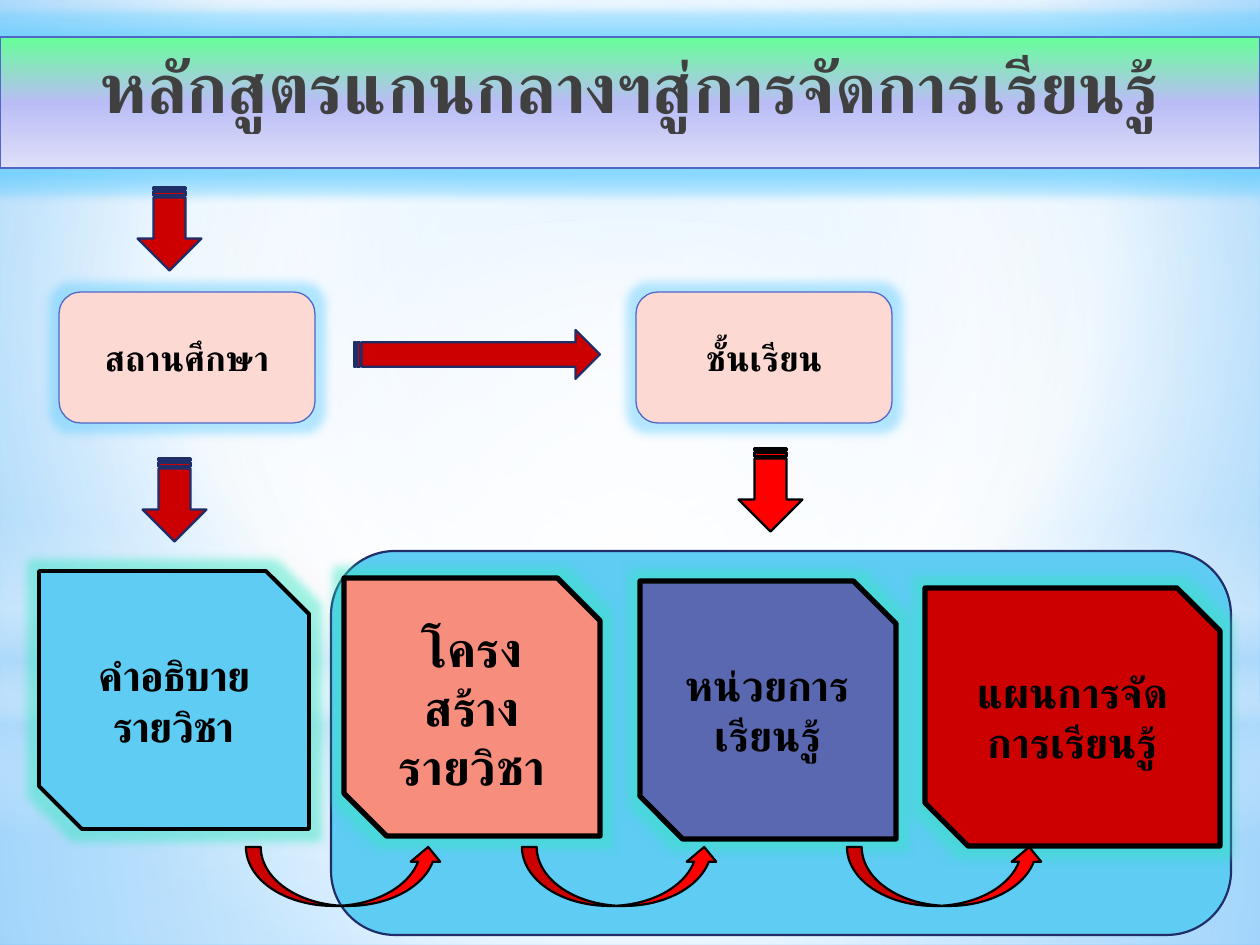
"""Build the slide that leads from the core curriculum to learning plans."""
from dataclasses import dataclass
from typing import Optional

from lxml.etree import SubElement
from pptx import Presentation
from pptx.dml.color import RGBColor
from pptx.enum.shapes import MSO_SHAPE
from pptx.enum.text import MSO_ANCHOR, PP_ALIGN
from pptx.oxml.ns import qn
from pptx.util import Pt

SCALE = 914400 / 126
FONT = "Calibri"

BLACK = RGBColor(0x00, 0x00, 0x00)
WHITE = RGBColor(0xFF, 0xFF, 0xFF)
GREY = RGBColor(0x40, 0x40, 0x40)
NAVY = RGBColor(0x1F, 0x2E, 0x69)
BLUE = RGBColor(0x4E, 0x67, 0xC8)
SKY = RGBColor(0x5E, 0xCC, 0xF3)
HAZE = RGBColor(0xB4, 0xDC, 0xFA)
PINK = RGBColor(0xFC, 0xD9, 0xD3)
CORAL = RGBColor(0xF7, 0x8D, 0x7C)
SLATE = RGBColor(0x59, 0x68, 0xB0)
CRIMSON = RGBColor(0xCC, 0x00, 0x00)
RED = RGBColor(0xFF, 0x00, 0x00)
MINT = RGBColor(0x66, 0xFF, 0x99)
LILAC = RGBColor(0xBA, 0xBD, 0xF5)
PALE = RGBColor(0xDE, 0xDF, 0xF9)
AQUA = RGBColor(0x5E, 0xCC, 0xFF)
TEAL = RGBColor(0x33, 0xE6, 0xC0)
DAY = RGBColor(0x9E, 0xD5, 0xFF)
DEEP = RGBColor(0x5B, 0xB9, 0xFF)


@dataclass
class Stop:
    pos: int
    color: RGBColor
    alpha: int = 100


@dataclass
class Grad:
    stops: list[Stop]
    focus: Optional[tuple[int, int, int, int]] = None


@dataclass
class Box:
    kind: MSO_SHAPE
    left: int
    top: int
    width: int
    height: int
    fill: RGBColor | Grad
    line: Optional[RGBColor] = None
    weight: float = 1.25
    turn: int = 0
    glow: Optional[RGBColor] = None
    text: str = ""
    size: int = 24
    ink: RGBColor = BLACK
    anchor: MSO_ANCHOR = MSO_ANCHOR.MIDDLE
    space: int = 0


def px(value: int) -> int:
    return round(value * SCALE)


def add_color(node, color: RGBColor, alpha: int) -> None:
    tint = SubElement(node, qn("a:srgbClr"), val=str(color))
    if alpha < 100:
        SubElement(tint, qn("a:alpha"), val=str(alpha * 1000))


def blend(fill, node, grad: Grad) -> None:
    fill.gradient()
    root = node.find(".//" + qn("a:gradFill"))
    for child in list(root):
        root.remove(child)
    stops = SubElement(root, qn("a:gsLst"))
    for stop in grad.stops:
        item = SubElement(stops, qn("a:gs"), pos=str(stop.pos * 1000))
        add_color(item, stop.color, stop.alpha)
    if grad.focus:
        ring = SubElement(root, qn("a:path"), path="circle")
        sides = {side: str(part * 1000) for side, part in zip("ltrb", grad.focus)}
        SubElement(ring, qn("a:fillToRect"), **sides)
    else:
        SubElement(root, qn("a:lin"), ang="5400000", scaled="0")


def add_text(shape, box: Box) -> None:
    frame = shape.text_frame
    frame.word_wrap = True
    frame.vertical_anchor = box.anchor
    frame.text = box.text
    for para in frame.paragraphs:
        para.alignment = PP_ALIGN.CENTER
        for run in para.runs:
            font = run.font
            font.name, font.size, font.bold = FONT, Pt(box.size), True
            font.color.rgb = box.ink
            props = run._r.get_or_add_rPr()
            SubElement(props, qn("a:cs"), typeface=FONT)
            if box.space:
                props.set("spc", str(box.space))


def draw(slide, box: Box) -> None:
    place = [px(side) for side in (box.left, box.top, box.width, box.height)]
    shape = slide.shapes.add_shape(box.kind, *place)
    shape.rotation = box.turn
    shape.shadow.inherit = False
    if isinstance(box.fill, Grad):
        blend(shape.fill, shape.element, box.fill)
    else:
        shape.fill.solid()
        shape.fill.fore_color.rgb = box.fill
    if box.line is None:
        shape.line.fill.background()
    else:
        shape.line.color.rgb = box.line
        shape.line.width = Pt(box.weight)
    if box.glow is not None:
        effects = shape.element.spPr.find(qn("a:effectLst"))
        add_color(SubElement(effects, qn("a:glow"), rad=str(Pt(11))), box.glow, 45)
    if box.text:
        add_text(shape, box)


def stage(name: str, left: int, top: int, width: int, fill: RGBColor,
          weight: float = 3, size: int = 24, space: int = 0) -> Box:
    return Box(MSO_SHAPE.SNIP_2_DIAG_RECTANGLE, left, top, width, 258, fill, BLACK,
               weight, glow=TEAL, text=name, size=size, space=space)


def place_box(name: str, left: int) -> Box:
    return Box(MSO_SHAPE.ROUNDED_RECTANGLE, left, 292, 256, 131, PINK, BLUE, 0.75,
               glow=AQUA, text=name, size=20)


def down(left: int, top: int, fill: RGBColor, line: RGBColor) -> Box:
    return Box(MSO_SHAPE.STRIPED_RIGHT_ARROW, left, top, 83, 64, fill, line, turn=90)


MID = (50, 50, 50, 50)
SKYFILL = Grad([Stop(0, DAY), Stop(60, WHITE), Stop(100, DEEP)], (20, 10, 20, 60))
LOW = Grad([Stop(0, WHITE, 91), Stop(37, WHITE, 76), Stop(100, HAZE, 79)], MID)
HIGH = Grad([Stop(0, WHITE, 89), Stop(48, WHITE, 62), Stop(100, HAZE, 79)], MID)
BAND = Grad([Stop(0, WHITE, 0), Stop(29, WHITE, 30), Stop(45, HAZE, 40),
             Stop(55, WHITE, 26), Stop(65, HAZE, 60), Stop(100, WHITE, 0)])
SHINE = Grad([Stop(0, WHITE), Stop(56, WHITE, 0)], MID)
HEAD = Grad([Stop(0, MINT), Stop(50, LILAC), Stop(100, PALE)])

BOXES = [
    Box(MSO_SHAPE.RECTANGLE, 0, 703, 1260, 242, LOW),
    Box(MSO_SHAPE.RECTANGLE, 0, 0, 1260, 703, HIGH),
    Box(MSO_SHAPE.RECTANGLE, 0, 519, 1260, 315, BAND),
    Box(MSO_SHAPE.OVAL, 0, 220, 1260, 703, SHINE),
    Box(MSO_SHAPE.ROUNDED_RECTANGLE, 331, 551, 900, 384, SKY, NAVY),
    Box(MSO_SHAPE.RECTANGLE, 0, 37, 1260, 131, HEAD, BLUE, 0.75, glow=AQUA,
        text="หลักสูตรแกนกลางฯสู่การจัดการเรียนรู้", size=40, ink=GREY,
        anchor=MSO_ANCHOR.TOP),
    place_box("สถานศึกษา", 59),
    place_box("ชั้นเรียน", 636),
    stage("คำอธิบายรายวิชา", 39, 571, 270, SKY, weight=2.25, space=-50),
    stage("โครง\nสร้างรายวิชา", 344, 578, 256, CORAL, size=28),
    stage("หน่วยการเรียนรู้", 640, 581, 256, SLATE),
    stage("แผนการจัด\nการเรียนรู้", 925, 588, 295, CRIMSON),
    down(128, 197, CRIMSON, NAVY),
    Box(MSO_SHAPE.STRIPED_RIGHT_ARROW, 354, 330, 246, 49, CRIMSON, NAVY),
    down(133, 468, CRIMSON, NAVY),
    *(Box(MSO_SHAPE.CURVED_UP_ARROW, left, 847, 197, 59, RED, BLACK)
      for left in (246, 522, 847)),
    down(729, 458, RED, BLACK),
]


def main() -> None:
    deck = Presentation()
    deck.slide_width, deck.slide_height = px(1260), px(945)
    slide = deck.slides.add_slide(deck.slide_layouts[6])
    blend(slide.background.fill, slide.element, SKYFILL)
    for box in BOXES:
        draw(slide, box)
    deck.save("out.pptx")


if __name__ == "__main__":
    main()
